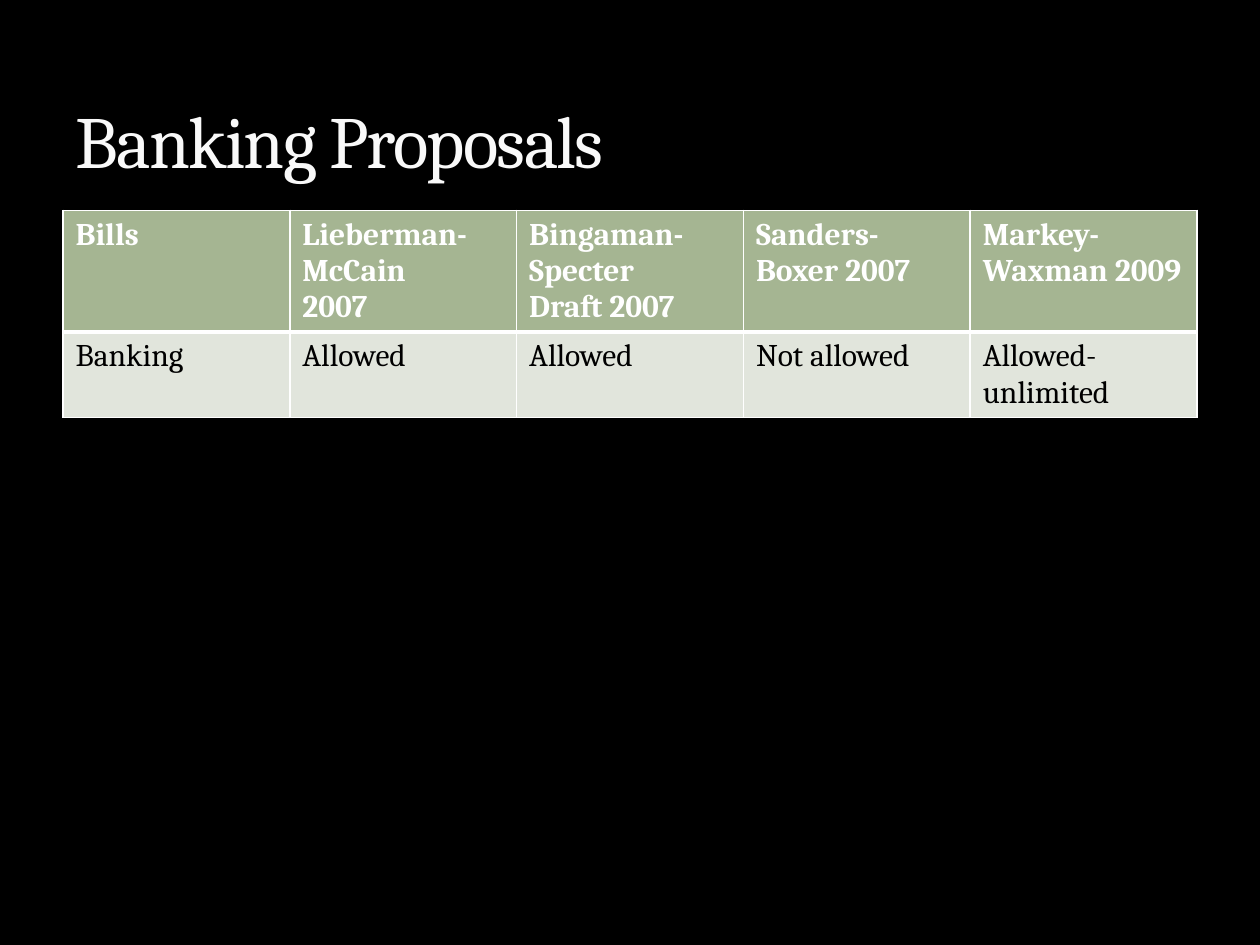
from lxml.etree import SubElement
from pptx import Presentation
from pptx.dml.color import RGBColor
from pptx.enum.text import MSO_ANCHOR as Anchor
from pptx.oxml import parse_xml
from pptx.oxml.ns import nsdecls, qn
from pptx.util import Inches, Pt

FONT = "Cambria"
WHITE = "FFFFFF"
HEADER_FORMAT = {"size": Pt(18), "name": FONT, "bold": True}
BODY_FORMAT = {"size": Pt(18), "name": FONT, "bold": False}
TITLE_FORMAT = {"size": Pt(42), "name": FONT, "bold": False}

ROWS = [
    ["Bills", "Lieberman-McCain\n2007", "Bingaman-Specter\nDraft 2007",
     "Sanders-Boxer 2007", "Markey-Waxman 2009"],
    ["Banking", "Allowed", "Allowed", "Not allowed", "Allowed-unlimited"],
]
# Fill, text colour, font format and border widths in points for each row;
# the header's bottom border serves as the body's top border
ROW_STYLES = [
    ("A5B592", WHITE, HEADER_FORMAT, {"lnL": 1, "lnR": 1, "lnT": 1, "lnB": 3}),
    ("E1E5DC", "000000", BODY_FORMAT, {"lnL": 1, "lnR": 1, "lnB": 1}),
]


def color(value):
    return RGBColor.from_string(value)


def format_font(font, text_color, values):
    for name, value in values.items():
        setattr(font, name, value)
    font.color.rgb = color(text_color)


def set_borders(cell, widths):
    properties = cell._tc.get_or_add_tcPr()
    # Border lines come before the fill in the cell properties
    for position, (side, width) in enumerate(widths.items()):
        line = parse_xml(f'<a:{side} {nsdecls("a")} w="{Pt(width)}"/>')
        fill = SubElement(line, qn("a:solidFill"))
        SubElement(fill, qn("a:srgbClr"), val=WHITE)
        properties.insert(position, line)


def add_title(slide, text, left, top, width, height):
    shape = slide.shapes.add_textbox(left, top, width, height)
    frame = shape.text_frame
    frame.word_wrap = True
    frame.vertical_anchor = Anchor.BOTTOM
    run = frame.paragraphs[0].add_run()
    run.text = text
    format_font(run.font, "F9F9F9", TITLE_FORMAT)

    # Tight letter spacing and a faint outline
    properties = run._r.get_or_add_rPr()
    properties.set("spc", "-100")
    properties.insert(0, parse_xml(
        f'<a:ln {nsdecls("a")} w="{Pt(0.25)}"><a:solidFill><a:srgbClr val="3C4422">'
        '<a:alpha val="25000"/></a:srgbClr></a:solidFill></a:ln>'))


def add_bills_table(slide, left, top, width, row_height):
    row_count, column_count = len(ROWS), len(ROWS[0])
    table = slide.shapes.add_table(row_count, column_count, left, top, width,
                                   row_height * row_count).table
    for row_index, (texts, style) in enumerate(zip(ROWS, ROW_STYLES)):
        fill_color, text_color, font_format, borders = style
        for column_index, text in enumerate(texts):
            cell = table.cell(row_index, column_index)
            cell.text = text
            cell.fill.solid()
            cell.fill.fore_color.rgb = color(fill_color)
            set_borders(cell, borders)
            for paragraph in cell.text_frame.paragraphs:
                for run in paragraph.runs:
                    format_font(run.font, text_color, font_format)


def main():
    presentation = Presentation()
    presentation.slide_width = Inches(10)
    presentation.slide_height = Inches(7.5)
    slide = presentation.slides.add_slide(presentation.slide_layouts[6])
    background = slide.background.fill
    background.solid()
    background.fore_color.rgb = color("000000")

    left, width = Inches(0.5), Inches(9)
    add_bills_table(slide, left, Inches(1.67), width, Inches(0.41))
    add_title(slide, "Banking Proposals", left, Inches(0.17), width, Inches(1.33))
    presentation.save("out.pptx")


if __name__ == "__main__":
    main()
